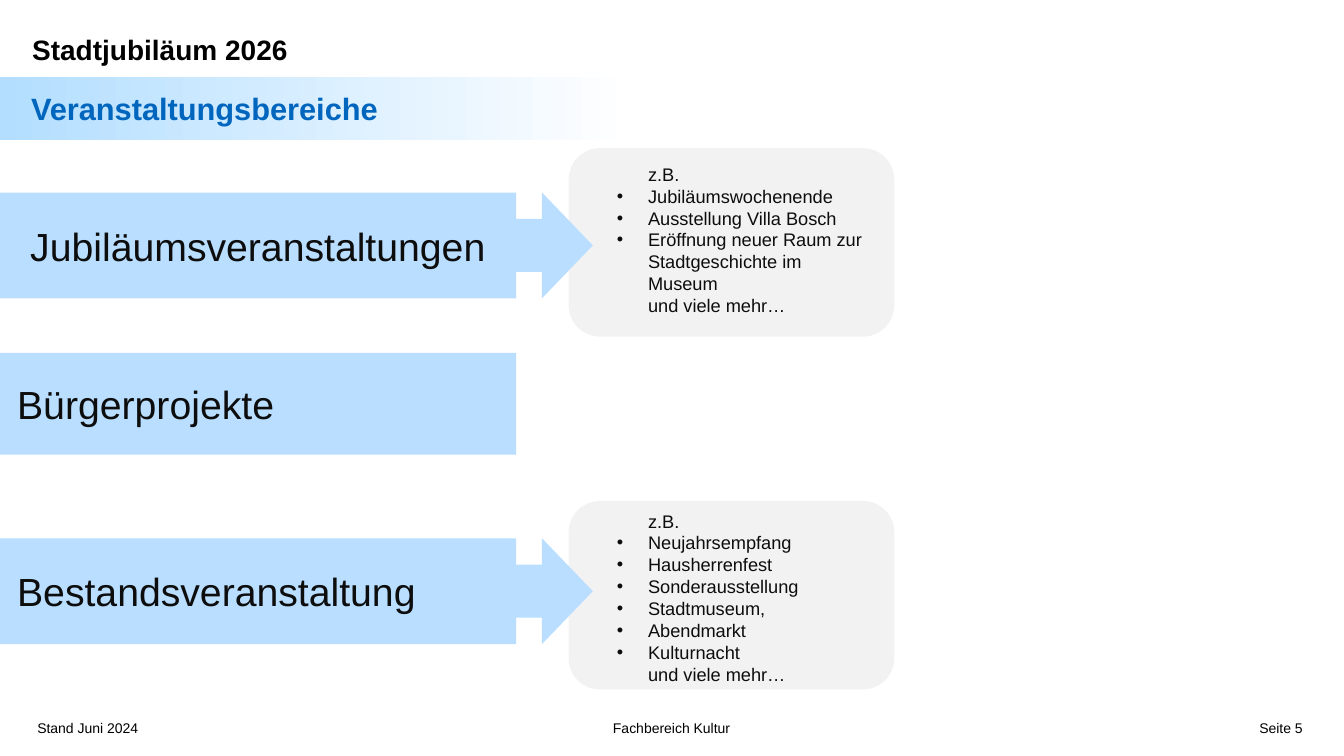
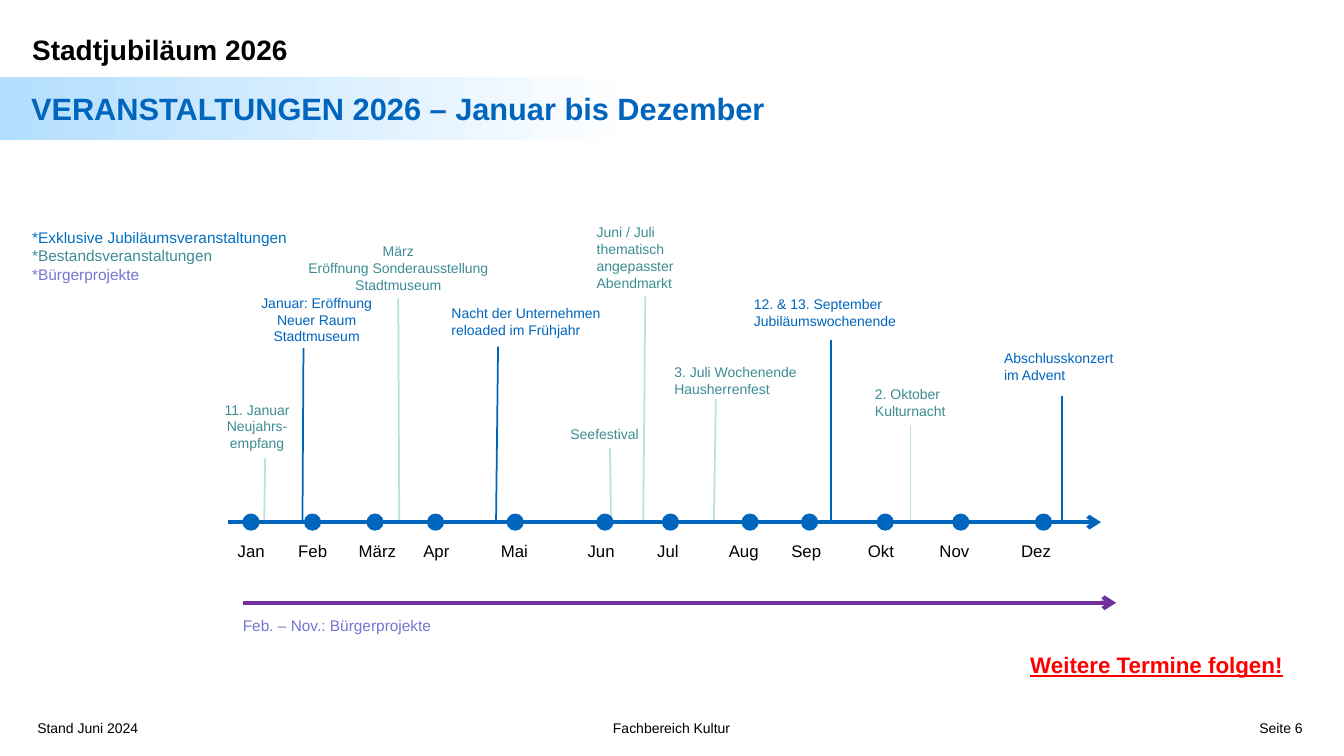
"""Build two slides on the city anniversary: event categories and the 2026 timeline."""
from dataclasses import dataclass

from lxml import etree
from pptx import Presentation
from pptx.dml.color import RGBColor
from pptx.enum.shapes import MSO_CONNECTOR, MSO_SHAPE
from pptx.enum.text import MSO_ANCHOR, PP_ALIGN
from pptx.oxml.ns import qn
from pptx.util import Inches, Pt

LEFT, CENTER, RIGHT = PP_ALIGN.LEFT, PP_ALIGN.CENTER, PP_ALIGN.RIGHT
TOP, MIDDLE = MSO_ANCHOR.TOP, MSO_ANCHOR.MIDDLE
RECT, ROUNDED = MSO_SHAPE.RECTANGLE, MSO_SHAPE.ROUNDED_RECTANGLE
ARROW, DOT = MSO_SHAPE.RIGHT_ARROW, MSO_SHAPE.FLOWCHART_CONNECTOR
STRAIGHT = MSO_CONNECTOR.STRAIGHT


@dataclass(frozen=True)
class Theme:
    """Colours, font and type sizes."""
    font: str = "Arial"
    black: str = "000000"
    white: str = "FFFFFF"
    ink: str = "0D0D0D"
    blue: str = "0065BD"
    legend_blue: str = "0070C0"
    teal: str = "3C8C93"
    pale_teal: str = "BBE0E3"
    violet: str = "7575D1"
    purple: str = "7030A0"
    red: str = "FF0000"
    band: str = "B3DEFF"
    bar: str = "B9DEFF"
    panel: str = "F2F2F2"
    category: int = 28
    title: int = 22
    heading: int = 20
    notice: int = 16
    body: int = 13
    month: int = 12
    legend: int = 11
    small: int = 10


THEME = Theme()
INSETS = (0.1, 0.05, 0.1, 0.05)
HANG = 0.31

HEADING = "Stadtjubiläum 2026"
STATUS = "Stand Juni 2024"
DEPARTMENT = "Fachbereich Kultur"

AREAS_TITLE = "Veranstaltungsbereiche"
CATEGORIES = [
    {"name": "Jubiläumsveranstaltungen", "top": 1.91, "height": 1.05, "indent": 0.3,
     "panel_top": 1.47, "text_top": 1.57,
     "examples": ["Jubiläumswochenende", "Ausstellung Villa Bosch",
                  "Eröffnung neuer Raum zur Stadtgeschichte im Museum"]},
    {"name": "Bürgerprojekte", "top": 3.5, "height": 1.01, "indent": 0.17, "examples": []},
    {"name": "Bestandsveranstaltung", "top": 5.34, "height": 1.05, "indent": 0.17,
     "panel_top": 4.97, "text_top": 5.01,
     "examples": ["Neujahrsempfang", "Hausherrenfest", "Sonderausstellung",
                  "Stadtmuseum,", "Abendmarkt", "Kulturnacht"]},
]

TIMELINE_TITLE = "VERANSTALTUNGEN 2026 – Januar bis Dezember"
LEGEND = [
    ("*Exklusive Jubiläumsveranstaltungen", {"color": THEME.legend_blue}),
    ("*Bestandsveranstaltungen", {"color": THEME.teal}),
    ("*Bürgerprojekte", {"color": THEME.violet}),
]
AXIS_Y = 5.18
DOT_SIZE = 0.16
MONTHS = [
    ("Jan", 2.49, 0), ("Feb", 3.1, 0.6), ("März", 3.72, 1.2), ("Apr", 4.32, 1.84),
    ("Mai", 5.11, 2.61), ("Jun", 6, 3.47), ("Jul", 6.65, 4.16), ("Aug", 7.44, 4.87),
    ("Sep", 8.03, 5.49), ("Okt", 8.78, 6.25), ("Nov", 9.53, 6.96), ("Dez", 10.35, 7.77),
]
JUBILEE = (THEME.blue, THEME.blue)
EXISTING = (THEME.teal, THEME.pale_teal)
EVENTS = [
    (["11. Januar", "Neujahrs-empfang"], EXISTING, CENTER,
     (2.02, 3.93, 1.06, 0.61), (2.62, 2.63, 4.54)),
    (["Januar: Eröffnung Neuer Raum", "Stadtmuseum"], JUBILEE, CENTER,
     (2.42, 2.87, 1.44, 0.61), (3, 3.01, 3.45)),
    (["März", "Eröffnung Sonderausstellung Stadtmuseum"], EXISTING, CENTER,
     (2.81, 2.36, 2.28, 0.61), (3.96, 3.95, 2.96)),
    (["Nacht der Unternehmen reloaded im Frühjahr"], JUBILEE, LEFT,
     (4.38, 2.97, 1.74, 0.44), (4.92, 4.94, 3.44)),
    (["Seefestival"], EXISTING, LEFT,
     (5.56, 4.17, 0.97, 0.27), (6.06, 6.05, 4.44)),
    (["Juni / Juli", "thematisch angepasster Abendmarkt"], EXISTING, LEFT,
     (5.82, 2.17, 1.16, 0.77), (6.38, 6.4, 2.94)),
    (["3. Juli Wochenende", "Hausherrenfest"], EXISTING, LEFT,
     (6.59, 3.56, 1.43, 0.44), (7.08, 7.1, 3.96)),
    (["12. & 13. September", "Jubiläumswochenende"], JUBILEE, LEFT,
     (7.38, 2.88, 1.73, 0.44), (8.24, 8.24, 3.37)),
    (["2. Oktober", "Kulturnacht"], EXISTING, LEFT,
     (8.58, 3.78, 1.16, 0.44), (9.03, 9.03, 4.22)),
    (["Abschlusskonzert im Advent"], JUBILEE, LEFT,
     (9.86, 3.42, 1.37, 0.44), (10.53, 10.53, 3.93)),
]
PROJECT_SPAN = "Feb. – Nov.: Bürgerprojekte"
NOTICE = "Weitere Termine folgen!"


def rgb(color):
    """Turn a hex string into a colour."""
    return RGBColor.from_string(color)


def format_paragraph(paragraph, margin, bullet, tabs):
    """Set the indent, bullet and tab stops of a paragraph."""
    properties = paragraph._p.get_or_add_pPr()
    if margin:
        properties.set("marL", str(Inches(margin)))
        properties.set("indent", str(-Inches(margin) if bullet else 0))
    if bullet:
        etree.SubElement(properties, qn("a:buFont"), typeface=THEME.font)
        etree.SubElement(properties, qn("a:buChar"), char="•")
    if tabs:
        stops = etree.SubElement(properties, qn("a:tabLst"))
        for stop in tabs:
            etree.SubElement(stops, qn("a:tab"), pos=str(Inches(stop)), algn="l")


def write(frame, lines, *, size, color=THEME.black, bold=False, underline=False,
          align=LEFT, anchor=TOP, insets=INSETS, tabs=()):
    """Fill a text frame; a line is a string or a string with its own format."""
    frame.word_wrap = True
    frame.vertical_anchor = anchor
    (frame.margin_left, frame.margin_top,
     frame.margin_right, frame.margin_bottom) = map(Inches, insets)
    for index, line in enumerate(lines):
        text, own = (line, {}) if isinstance(line, str) else line
        paragraph = frame.add_paragraph() if index else frame.paragraphs[0]
        format_paragraph(paragraph, own.get("margin", 0), own.get("bullet", False), tabs)
        paragraph.alignment = align
        run = paragraph.add_run()
        run.text = text
        run.font.name = THEME.font
        run.font.size = Pt(size)
        run.font.bold = bold
        run.font.underline = underline
        run.font.color.rgb = rgb(own.get("color", color))


def add_text(slide, box, *lines, **text_format):
    """Add a text box."""
    write(slide.shapes.add_textbox(*map(Inches, box)).text_frame, lines, **text_format)


def add_block(slide, preset, box, color):
    """Add a filled shape without outline or shadow."""
    block = slide.shapes.add_shape(preset, *map(Inches, box))
    block.shadow.inherit = False
    block.fill.solid()
    block.fill.fore_color.rgb = rgb(color)
    block.line.fill.background()
    return block


def add_line(slide, start, end, color, width, arrow=False):
    """Add a straight line, with an arrowhead at its end if asked."""
    line = slide.shapes.add_connector(STRAIGHT, *map(Inches, (*start, *end)))
    line.line.color.rgb = rgb(color)
    line.line.width = Pt(width)
    if arrow:
        etree.SubElement(line.line._get_or_add_ln(), qn("a:tailEnd"), type="arrow")
    etree.SubElement(line._element.spPr, qn("a:effectLst"))


def add_page(deck, title, number):
    """Add a slide with heading, title band and footer."""
    slide = deck.slides.add_slide(deck.slide_layouts[6])
    band = add_block(slide, RECT, (0, 0.76, 6.27, 0.63), THEME.band)
    band.fill.gradient()
    band.fill.gradient_angle = 0
    for stop, color in zip(band.fill.gradient_stops, (THEME.band, THEME.white)):
        stop.color.rgb = rgb(color)
    add_text(slide, (0.22, 0.27, 4, 0.44), HEADING, size=THEME.heading, bold=True)
    add_text(slide, (0.21, 0.84, 9, 0.45), title, size=THEME.title,
             color=THEME.blue, bold=True)
    footer = [(STATUS, 0.37, 1.37, LEFT), (DEPARTMENT, 3.72, 5.88, CENTER),
              (f"Seite {number}", 11.84, 1.08, RIGHT)]
    for text, left, width, align in footer:
        add_text(slide, (left, 7.14, width, 0.17), text, size=THEME.small,
                 align=align, insets=(0, 0, 0, 0))
    return slide


def build_areas(deck):
    """Show the event categories with their examples."""
    slide = add_page(deck, AREAS_TITLE, 5)
    for category in CATEGORIES:
        top, height = category["top"], category["height"]
        bar = add_block(slide, RECT, (0, top, 5.12, height), THEME.bar)
        write(bar.text_frame, [category["name"]], size=THEME.category, color=THEME.ink,
              anchor=MIDDLE, insets=(category["indent"], 0, 0, 0))
        if not category["examples"]:
            continue
        add_block(slide, ROUNDED, (5.64, category["panel_top"], 3.23, 1.87), THEME.panel)
        add_block(slide, ARROW, (4.87, top, 1.01, height), THEME.bar)
        examples = [(text, {"margin": HANG, "bullet": True})
                    for text in category["examples"]]
        add_text(slide, (6.02, category["text_top"], 2.76, 1.83),
                 ("z.B.", {"margin": HANG}), *examples,
                 ("und viele mehr…", {"margin": HANG}),
                 size=THEME.body, color=THEME.ink)


def build_timeline(deck):
    """Show the events of the year above a month axis."""
    slide = add_page(deck, TIMELINE_TITLE, 6)
    add_text(slide, (0.22, 2.21, 3.14, 0.66), *LEGEND, size=THEME.legend)
    for lines, (text_color, stem_color), align, box, (foot_x, head_x, head_y) in EVENTS:
        add_line(slide, (foot_x, AXIS_Y), (head_x, head_y), stem_color, 1.25)
        add_text(slide, box, *lines, size=THEME.small, color=text_color, align=align)
    add_line(slide, (2.26, AXIS_Y), (10.92, AXIS_Y), THEME.blue, 3, arrow=True)
    names, centers, offsets = zip(*MONTHS)
    for center in centers:
        dot = add_block(slide, DOT, (center - DOT_SIZE / 2, AXIS_Y - DOT_SIZE / 2,
                                     DOT_SIZE, DOT_SIZE), THEME.blue)
        dot.line.color.rgb = rgb(THEME.blue)
        dot.line.width = Pt(0.75)
    add_text(slide, (2.26, 5.32, 8.73, 0.3), "\t".join(names), size=THEME.month,
             tabs=offsets[1:])
    add_line(slide, (2.41, 5.98), (11.07, 5.98), THEME.purple, 3, arrow=True)
    add_text(slide, (2.31, 6.06, 5.4, 0.29), PROJECT_SPAN, size=THEME.legend,
             color=THEME.violet)
    add_text(slide, (10.12, 6.41, 3.1, 0.37), NOTICE, size=THEME.notice,
             color=THEME.red, bold=True, underline=True)


def main():
    """Build and save the deck."""
    deck = Presentation()
    deck.slide_width, deck.slide_height = Inches(13.33), Inches(7.5)
    build_areas(deck)
    build_timeline(deck)
    deck.save("out.pptx")


if __name__ == "__main__":
    main()
